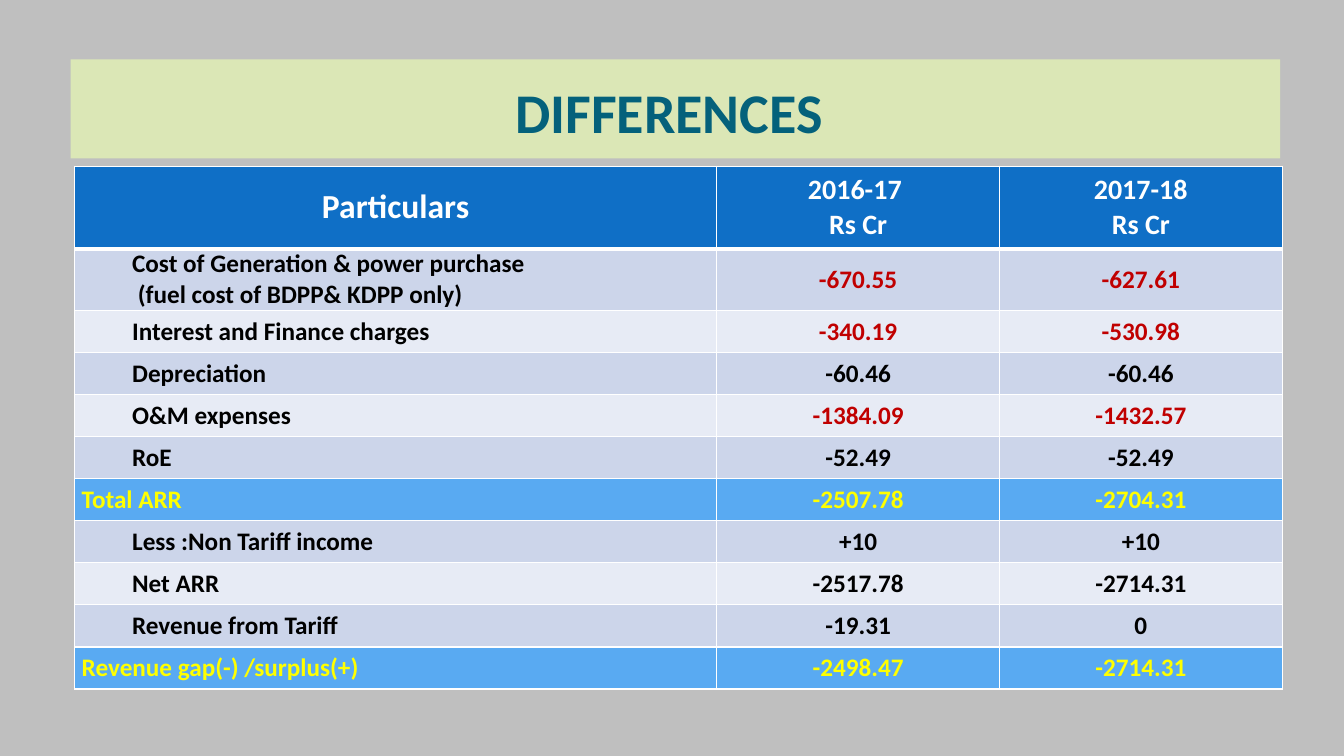
from lxml.etree import SubElement
from pptx import Presentation
from pptx.dml.color import RGBColor
from pptx.enum.shapes import MSO_SHAPE
from pptx.enum.text import MSO_ANCHOR as ANCHOR, PP_ALIGN as ALIGN
from pptx.oxml.ns import qn
from pptx.util import Cm, Pt

TITLE = "DIFFERENCES "
HEADER = ["Particulars", "2016-17 \nRs Cr", "2017-18\nRs Cr"]
ITEM, RED, TOTAL = "item", "red", "total"
ROWS = [
    (RED, "Cost of Generation & power purchase\n (fuel cost of BDPP& KDPP only)", "-670.55", "-627.61"),
    (RED, "Interest and Finance charges", "-340.19", "-530.98"),
    (ITEM, "Depreciation", "-60.46", "-60.46"),
    (RED, "O&M expenses", "-1384.09", "-1432.57"),
    (ITEM, "RoE", "-52.49", "-52.49"),
    (TOTAL, "Total ARR", "-2507.78", "-2704.31"),
    (ITEM, "Less :Non Tariff income", "+10", "+10"),
    (ITEM, "Net ARR", "-2517.78", "-2714.31"),
    (ITEM, "Revenue from Tariff", "-19.31", "0"),
    (TOTAL, "Revenue gap(-) /surplus(+)", "-2498.47", "-2714.31"),
]
COLORS = {
    "background": "BFBFBF", "banner": "DBE7B6", "title": "04617B",
    "header": "0F6FC6", "band": "CCD5EA", "light_band": "E7EBF5",
    "total": "59AAF2", "total_text": "FFFF00", "red": "C00000",
    "white": "FFFFFF", "black": "000000",
}
COL_WIDTHS = [16.18, 7.13, 7.12]
ROW_HEIGHTS = [2.08, 1.4] + [1.06] * (len(ROWS) - 1)


def paint(fill, color):
    fill.solid()
    fill.fore_color.rgb = RGBColor.from_string(COLORS[color])


def write(tf, text, size=18, color="black", align=ALIGN.CENTER, indent=0):
    """Fill a text frame with bold text, one paragraph per line."""
    for i, line in enumerate(text.split("\n")):
        p = tf.add_paragraph() if i else tf.paragraphs[0]
        p.alignment = align
        if indent:
            p.level = 1
            pPr = p._p.get_or_add_pPr()
            pPr.set("marL", str(Cm(indent)))
            pPr.set("indent", "0")
        r = p.add_run()
        r.text = line
        r.font.name, r.font.size, r.font.bold = "Calibri", Pt(size), True
        r.font.color.rgb = RGBColor.from_string(COLORS[color])


def add_borders(cell, top=1, bottom=1):
    """Add white borders; call before the fill, which must follow them."""
    tcPr = cell._tc.get_or_add_tcPr()
    for side, width in (("L", 1), ("R", 1), ("T", top), ("B", bottom)):
        ln = SubElement(tcPr, qn(f"a:ln{side}"), w=str(Pt(width)))
        fill = SubElement(ln, qn("a:solidFill"))
        SubElement(fill, qn("a:srgbClr"), val=COLORS["white"])


def add_title(slide):
    sp = slide.shapes.add_shape(MSO_SHAPE.RECTANGLE, Cm(1.78), Cm(1.5), Cm(30.48), Cm(2.49))
    sp.shadow.inherit = False
    sp.line.fill.background()
    paint(sp.fill, "banner")
    tf = sp.text_frame
    tf.word_wrap = True
    tf.vertical_anchor = ANCHOR.MIDDLE
    tf.margin_left = tf.margin_right = tf.margin_bottom = 0
    tf.margin_top = Cm(0.13)
    write(tf, TITLE, size=40, color="title")


def add_header(table):
    for col, text in enumerate(HEADER):
        cell = table.cell(0, col)
        add_borders(cell, bottom=3)
        paint(cell.fill, "header")
        cell.vertical_anchor = ANCHOR.MIDDLE
        write(cell.text_frame, text, size=20 if col else 24, color="white")


def add_row(table, row, kind, values):
    band = "total" if kind == TOTAL else "band" if row % 2 else "light_band"
    for col, text in enumerate(values):
        cell = table.cell(row, col)
        add_borders(cell, top=3 if row == 1 else 1)
        paint(cell.fill, band)
        cell.vertical_anchor = ANCHOR.MIDDLE
        cell.margin_left = cell.margin_right = Cm(0.18)
        cell.margin_top = cell.margin_bottom = 0
        color = "total_text" if kind == TOTAL else "red" if kind == RED and col else "black"
        write(cell.text_frame, text, color=color,
              align=ALIGN.CENTER if col else ALIGN.LEFT,
              indent=0 if col or kind == TOTAL else 1.27)


def add_differences(slide):
    frame = slide.shapes.add_table(
        len(ROW_HEIGHTS), len(COL_WIDTHS), Cm(1.88), Cm(4.19),
        Cm(sum(COL_WIDTHS)), Cm(sum(ROW_HEIGHTS)))
    table = frame.table
    for column, width in zip(table.columns, COL_WIDTHS):
        column.width = Cm(width)
    for line, height in zip(table.rows, ROW_HEIGHTS):
        line.height = Cm(height)
    add_header(table)
    for row, (kind, *values) in enumerate(ROWS, start=1):
        add_row(table, row, kind, values)


def main():
    prs = Presentation()
    prs.slide_width, prs.slide_height = Cm(33.87), Cm(19.05)
    slide = prs.slides.add_slide(prs.slide_layouts[6])
    paint(slide.background.fill, "background")
    add_title(slide)
    add_differences(slide)
    prs.save("out.pptx")


if __name__ == "__main__":
    main()
